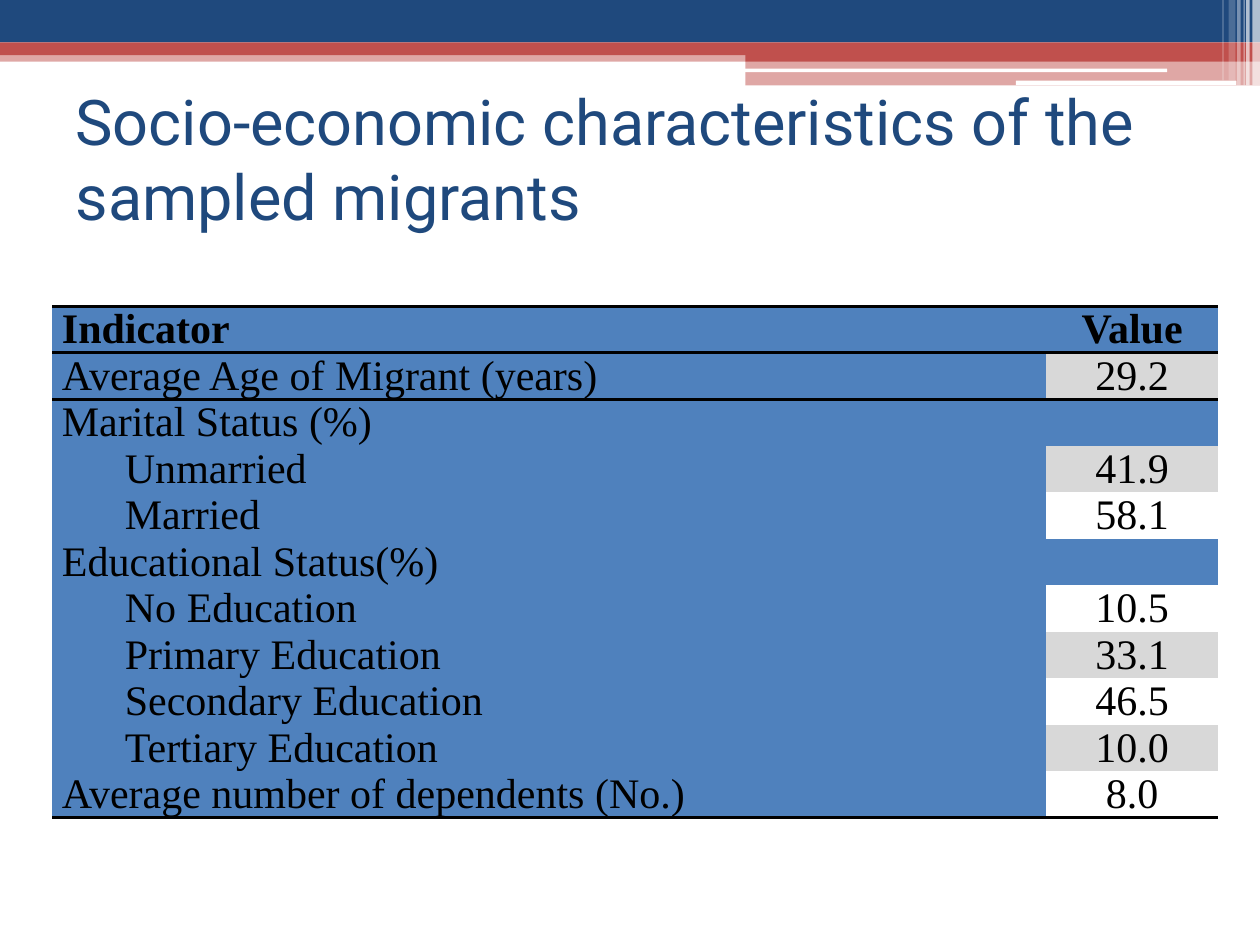
from dataclasses import dataclass
from lxml.etree import SubElement
from pptx import Presentation
from pptx.dml.color import RGBColor
from pptx.enum.shapes import MSO_SHAPE
from pptx.enum.text import MSO_ANCHOR, PP_ALIGN
from pptx.oxml import parse_xml
from pptx.oxml.ns import nsdecls, qn
from pptx.util import Pt


@dataclass
class Theme:
    navy: str = "1F497D"
    red: str = "C0504D"
    blue: str = "4F81BD"
    gray: str = "D8D8D8"
    white: str = "FFFFFF"
    black: str = "000000"
    head: str = "Roboto"
    body: str = "Times New Roman"
    big: int = 36
    text: int = 24


theme = Theme()


def add_bar(left, top, width, height, color, alpha=100, kind=MSO_SHAPE.RECTANGLE):
    bar = slide.shapes.add_shape(kind, Pt(left), Pt(top), Pt(width), Pt(height))
    bar.shadow.inherit = False
    bar.line.fill.background()
    bar.fill.solid()
    bar.fill.fore_color.rgb = RGBColor.from_string(color)
    if alpha < 100:
        tint = bar.element.spPr.find(qn("a:solidFill"))[0]
        SubElement(tint, qn("a:alpha"), val=str(alpha * 1000))


def add_rule(cell, side):
    rule = parse_xml(
        f'<a:{side} {nsdecls("a")} w="{Pt(2.25)}"><a:solidFill>'
        f'<a:srgbClr val="{theme.black}"/></a:solidFill></a:{side}>')
    cell._tc.get_or_add_tcPr().insert(0, rule)


deck = Presentation()
deck.slide_width, deck.slide_height = Pt(720), Pt(540)
slide = deck.slides.add_slide(deck.slide_layouts[5])

# Header bands
add_bar(0, 28.8, 720, 6.5, theme.red, 50)
add_bar(0, 0, 720, 24.3, theme.navy)
add_bar(0, 24.3, 720, 7.2, theme.red)
add_bar(426, 28.1, 294, 7.2, theme.red)
add_bar(426, 35.3, 294, 13.5, theme.red, 50)
for left, top, width, height in [(425.5, 39.2, 241.5, 2), (580.5, 46.1, 126, 2.6)]:
    add_bar(left, top, width, height, theme.white, kind=MSO_SHAPE.ROUNDED_RECTANGLE)

# Pale stripes in the corner
stripes = [(715.7, 4.3, 48.8, 65), (712.1, 2, 48.8, 65), (710.6, 0.7, 48.8, 60),
           (707, 2, 48.8, 40), (702, 4, 46, 20), (698.5, 0.7, 46, 30)]
for left, width, height, alpha in stripes:
    add_bar(left, 0, width, height, theme.white, alpha)

# Title, in front of the bands
title = slide.shapes.title
title.element.getparent().append(title.element)
title.left, title.top, title.width, title.height = Pt(36), Pt(48.2), Pt(648), Pt(84.2)
frame = title.text_frame
frame.text = "Socio-economic characteristics of the sampled migrants"
frame.word_wrap = True
frame.vertical_anchor = MSO_ANCHOR.MIDDLE
frame.paragraphs[0].alignment = PP_ALIGN.LEFT
font = frame.paragraphs[0].runs[0].font
font.name, font.size = theme.head, Pt(theme.big)
font.color.rgb = RGBColor.from_string(theme.navy)

# Table: label, value (None spans both columns), indented, value fill
rows = [
    ("Indicator", "Value", False, theme.blue),
    ("Average Age of Migrant (years)", "29.2", False, theme.gray),
    ("Marital Status (%)", None, False, theme.blue),
    ("Unmarried", "41.9", True, theme.gray),
    ("Married", "58.1", True, None),
    ("Educational Status(%)", None, False, theme.blue),
    ("No Education", "10.5", True, None),
    ("Primary Education", "33.1", True, theme.gray),
    ("Secondary Education", "46.5", True, None),
    ("Tertiary Education", "10.0", True, theme.gray),
    ("Average number of dependents (No.)", "8.0", False, None),
]
step = 26.5
holder = slide.shapes.add_table(len(rows), 2, Pt(30), Pt(175), Pt(666), Pt(step * len(rows)))
plain = "{2D5ABB26-0587-4C30-8999-92F81FD0307C}"
holder.element.find(".//" + qn("a:tableStyleId")).text = plain
table = holder.table
table.columns[0].width, table.columns[1].width = Pt(568), Pt(98)

for row, (label, value, inset, fill) in enumerate(rows):
    table.rows[row].height = Pt(step)
    if value is None:
        table.cell(row, 0).merge(table.cell(row, 1))
    for col, (words, color) in enumerate([(label, theme.blue), (value, fill)]):
        if words is None:
            continue
        cell = table.cell(row, col)
        cell.margin_left = cell.margin_right = Pt(5.4)
        cell.margin_top = cell.margin_bottom = 0
        if 6 <= row <= 9:
            cell.vertical_anchor = MSO_ANCHOR.BOTTOM
        if color:
            cell.fill.solid()
            cell.fill.fore_color.rgb = RGBColor.from_string(color)
        else:
            cell.fill.background()

        cell.text_frame.text = words
        para = cell.text_frame.paragraphs[0]
        para.alignment = PP_ALIGN.CENTER if col else PP_ALIGN.LEFT
        if inset and col == 0:
            para._p.get_or_add_pPr().set("marL", str(Pt(36)))
        font = para.runs[0].font
        font.name, font.size, font.bold = theme.body, Pt(theme.text), row == 0
        font.color.rgb = RGBColor.from_string(theme.black)

        # Rules around the header and under the last row
        if row in (0, len(rows) - 1):
            add_rule(cell, "lnB")
        if row in (0, 1):
            add_rule(cell, "lnT")

deck.save("out.pptx")
